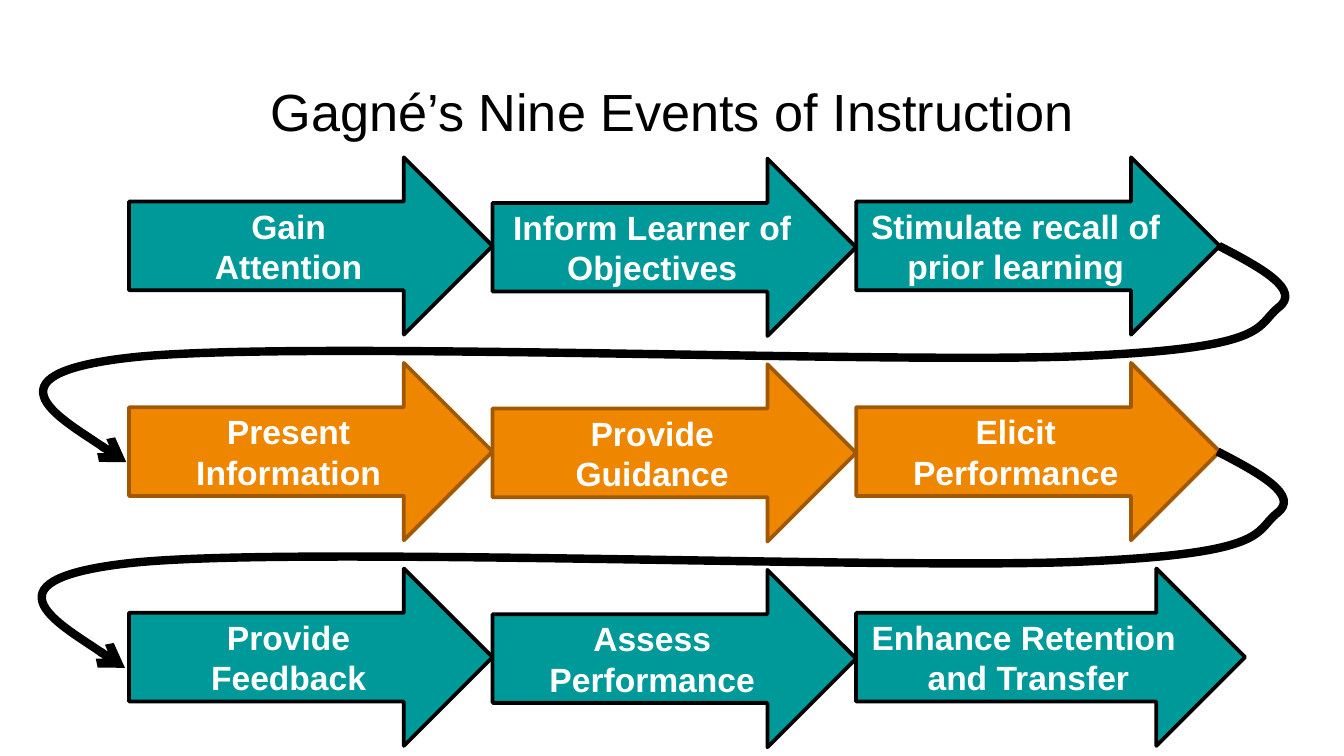
"""Build a slide with nine instruction steps as three rows of arrows."""
from dataclasses import dataclass

from lxml.etree import SubElement
from pptx import Presentation
from pptx.dml.color import RGBColor
from pptx.enum.shapes import MSO_SHAPE as Preset
from pptx.enum.text import MSO_ANCHOR as Anchor, MSO_AUTO_SIZE as AutoSize, PP_ALIGN as Align
from pptx.oxml.ns import qn
from pptx.slide import Slide
from pptx.text.text import TextFrame
from pptx.util import Inches, Pt

Point = tuple[float, float]


@dataclass(frozen=True)
class Theme:
    font: str = "Arial"
    black: str = "000000"
    white: str = "FFFFFF"
    teal: str = "009999"
    orange: str = "EF8600"
    brown: str = "A05900"
    title_size: float = 28
    label_size: float = 18
    outline: float = 2
    curve_width: float = 4.5


@dataclass(frozen=True)
class Grid:
    left: float = 0.96
    top: float = 1.17
    column: float = (6.37 - 0.96) / 2
    row: float = 1.53
    height: float = 1.32
    stagger: float = 0.01


@dataclass(frozen=True)
class Step:
    label: str
    columns: float = 1


@dataclass(frozen=True)
class Stage:
    fill: str
    line: str
    steps: tuple[Step, ...]


THEME = Theme()
GRID = Grid()
STAGES = (
    Stage(THEME.teal, THEME.black, (
        Step("Gain\nAttention"),
        Step("Inform Learner of Objectives"),
        Step("Stimulate recall of prior learning"),
    )),
    Stage(THEME.orange, THEME.brown, (
        Step("Present Information"),
        Step("Provide\nGuidance"),
        Step("Elicit Performance"),
    )),
    Stage(THEME.teal, THEME.black, (
        Step("Provide\nFeedback"),
        Step("Assess\nPerformance"),
        Step("Enhance Retention \nand Transfer", 1.07),
    )),
)
RETURN_START: Point = (9.07, 1.83)
RETURN_CURVES: tuple[tuple[Point, Point, Point], ...] = (
    ((9.38, 1.99), (9.69, 2.16), (9.51, 2.29)),
    ((9.34, 2.43), (9.46, 2.59), (8.04, 2.65)),
    ((6.62, 2.71), (2.17, 2.53), (0.98, 2.66)),
    ((-0.2, 2.79), (0.94, 3.44), (0.94, 3.44)),
)


def style_text(frame: TextFrame, size: float, color: str, bold: bool, anchor: Anchor) -> None:
    """Centre the text and format every run."""
    frame.word_wrap = True
    frame.vertical_anchor = anchor
    for para in frame.paragraphs:
        para.alignment = Align.CENTER
        for span in para.runs:
            span.font.name = THEME.font
            span.font.size = Pt(size)
            span.font.bold = bold
            span.font.color.rgb = RGBColor.from_string(color)


def set_title(page: Slide, text: str) -> None:
    """Place and format the title placeholder."""
    title = page.shapes.title
    title.left, title.top = Inches(0.34), Inches(0.49)
    title.width, title.height = Inches(9.32), Inches(0.63)
    frame = title.text_frame
    frame.text = text
    frame.auto_size = AutoSize.NONE
    frame.margin_left = frame.margin_right = Inches(0.1)
    frame.margin_top = frame.margin_bottom = Inches(0.1)
    style_text(frame, THEME.title_size, THEME.black, False, Anchor.TOP)


def draw_step(page: Slide, stage: Stage, step: Step, row: int, column: int) -> None:
    """Draw one labelled arrow in its grid cell."""
    arrow = page.shapes.add_shape(
        Preset.RIGHT_ARROW,
        Inches(GRID.left + column * GRID.column),
        Inches(GRID.top + row * GRID.row + column % 2 * GRID.stagger),
        Inches(step.columns * GRID.column),
        Inches(GRID.height),
    )
    arrow.shadow.inherit = False
    arrow.fill.solid()
    arrow.fill.fore_color.rgb = RGBColor.from_string(stage.fill)
    arrow.line.color.rgb = RGBColor.from_string(stage.line)
    arrow.line.width = Pt(THEME.outline)
    arrow.text_frame.text = step.label
    style_text(arrow.text_frame, THEME.label_size, THEME.white, True, Anchor.MIDDLE)


def draw_return(page: Slide, row: int) -> None:
    """Draw the curved arrow from the end of a row to the next row."""
    def place(point: Point) -> Point:
        return (Inches(point[0] - row * GRID.stagger), Inches(point[1] + row * GRID.row))

    start = place(RETURN_START)
    curves = [[place(point) for point in curve] for curve in RETURN_CURVES]
    builder = page.shapes.build_freeform(*start)
    builder.add_line_segments([curve[-1] for curve in curves], close=False)
    route = builder.convert_to_shape()
    route.shadow.inherit = False
    route.fill.background()
    route.line.color.rgb = RGBColor.from_string(THEME.black)
    route.line.width = Pt(THEME.curve_width)
    properties = route.element.spPr
    for segment, curve in zip(list(properties.iter(qn("a:lnTo"))), curves):
        bezier = SubElement(segment.getparent(), qn("a:cubicBezTo"))
        for x, y in curve:
            SubElement(bezier, qn("a:pt"), x=str(x - route.left), y=str(y - route.top))
        segment.getparent().replace(segment, bezier)
    SubElement(properties.find(qn("a:ln")), qn("a:tailEnd"), type="arrow")


def main() -> None:
    """Build and save the deck."""
    deck = Presentation()
    deck.slide_width = Inches(10)
    deck.slide_height = deck.slide_width * 9 // 16
    page = deck.slides.add_slide(deck.slide_layouts[5])
    set_title(page, "Gagné’s Nine Events of Instruction")
    for row, stage in enumerate(STAGES):
        for column, step in enumerate(stage.steps):
            draw_step(page, stage, step, row, column)
    for row in range(len(STAGES) - 1):
        draw_return(page, row)
    deck.save("out.pptx")


if __name__ == "__main__":
    main()
